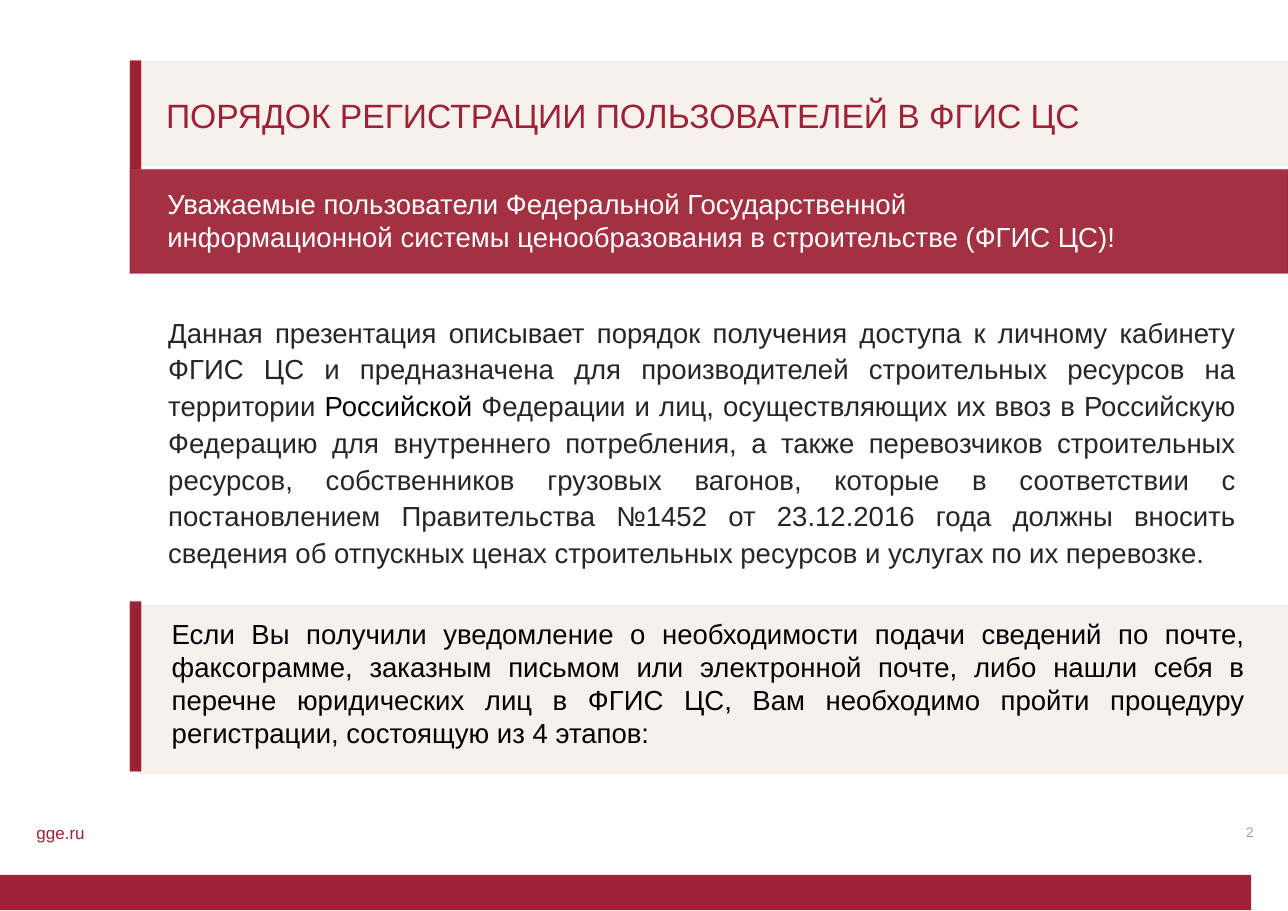
from lxml.etree import SubElement
from pptx import Presentation
from pptx.dml.color import RGBColor as Rgb
from pptx.enum.shapes import MSO_SHAPE as Shape
from pptx.enum.text import MSO_ANCHOR as Anchor, PP_ALIGN as Align
from pptx.oxml.ns import qn
from pptx.util import Cm, Pt

COLORS = {
    "burgundy": "9D2235",
    "greeting": "9E2234",
    "stripe": "9A2233",
    "stripe_edge": "BA2C44",
    "sand": "E9DDD3",
    "tan": "BD9A7A",
    "dark": "262626",
    "black": "000000",
    "white": "FFFFFF",
}
FONT = "Arial"
BAND_LEFT = 3.0
STRIPE_WIDTH = 0.25


def color(name):
    return Rgb.from_string(COLORS[name])


def set_opacity(fill_format, percent):
    if percent < 100:
        tint = fill_format._xPr.find(qn("a:solidFill"))[0]
        SubElement(tint, qn("a:alpha"), val=str(percent * 1000))


def write_text(frame, paragraphs, size=18, ink="black", align=Align.LEFT,
               spacing=None, margins=(0.25, 0.13), anchor=Anchor.TOP):
    frame.word_wrap = True
    frame.vertical_anchor = anchor
    frame.margin_left = frame.margin_right = Cm(margins[0])
    frame.margin_top = frame.margin_bottom = Cm(margins[1])
    for index, runs in enumerate(paragraphs):
        para = frame.paragraphs[0] if index == 0 else frame.add_paragraph()
        para.alignment = align
        if spacing:
            para.line_spacing = spacing
        for run in [runs] if isinstance(runs, str) else runs:
            text, tone = (run, ink) if isinstance(run, str) else run
            span = para.add_run()
            span.text = text
            span.font.name = FONT
            span.font.size = Pt(size)
            span.font.color.rgb = color(tone)


class SlideWriter:
    def __init__(self, deck):
        self.page = deck.slides.add_slide(deck.slide_layouts[6])

    def block(self, left, top, width, height, fill, opacity=100,
              edge=None, edge_opacity=100):
        box = self.page.shapes.add_shape(
            Shape.RECTANGLE, Cm(left), Cm(top), Cm(width), Cm(height))
        box.shadow.inherit = False
        box.fill.solid()
        box.fill.fore_color.rgb = color(fill)
        set_opacity(box.fill, opacity)
        if edge:
            box.line.width = Pt(1)
            box.line.color.rgb = color(edge)
            set_opacity(box.line.fill, edge_opacity) if edge_opacity == 100 else \
                SubElement(box.line._ln.find(qn("a:solidFill"))[0],
                           qn("a:alpha"), val=str(edge_opacity * 1000))
        else:
            box.line.fill.background()
        return box

    def stripe(self, top, height, edge):
        self.block(BAND_LEFT, top, STRIPE_WIDTH, height, "stripe",
                   edge=edge, edge_opacity=41)

    def text(self, left, top, width, height, *paragraphs, **style):
        box = self.page.shapes.add_textbox(
            Cm(left), Cm(top), Cm(width), Cm(height))
        write_text(box.text_frame, paragraphs, **style)


def main():
    deck = Presentation()
    deck.slide_width, deck.slide_height = Cm(29.7), Cm(21)
    slide = SlideWriter(deck)

    slide.block(0, 20.17, 28.85, 0.81, "burgundy")
    site = slide.block(0.84, 18.92, 2.69, 0.53, "white")
    write_text(site.text_frame, ["gge.ru"], size=11.1, ink="burgundy",
               margins=(0, 0), anchor=Anchor.MIDDLE)
    slide.text(28.3, 19, 0.61, 0.79, "2", size=9, ink="tan",
               align=Align.RIGHT, spacing=Pt(10.8), margins=(0, 0))

    slide.block(3.2, 13.94, 26.5, 3.91, "sand", opacity=39)
    slide.block(BAND_LEFT, 3.91, 26.7, 2.39, "greeting", opacity=93,
                edge="burgundy", edge_opacity=49)
    slide.block(3.25, 1.4, 26.45, 2.44, "sand", opacity=39)

    slide.text(3.58, 2.16, 25.93, 1.24,
               "ПОРЯДОК РЕГИСТРАЦИИ ПОЛЬЗОВАТЕЛЕЙ В ФГИС ЦС",
               size=22, ink="burgundy", spacing=0.9)
    slide.text(3.63, 7.06, 25.12, 6.25, [
        "Данная презентация описывает порядок получения доступа к личному "
        "кабинету ФГИС ЦС и предназначена для производителей строительных "
        "ресурсов на территории ",
        ("Российской", "black"),
        " Федерации и лиц, осуществляющих их ввоз в Российскую Федерацию для "
        "внутреннего потребления, а также перевозчиков строительных ресурсов, "
        "собственников грузовых вагонов, которые в соответствии с "
        "постановлением Правительства №1452 от 23.12.2016 года должны вносить "
        "сведения об отпускных ценах строительных ресурсов и услугах по их "
        "перевозке.",
    ], ink="dark", align=Align.JUSTIFY, spacing=Pt(24))

    slide.stripe(1.4, 2.51, "stripe_edge")
    slide.text(3.61, 4.19, 25.15, 1.8,
               "Уважаемые пользователи Федеральной Государственной",
               "информационной системы ценообразования в строительстве (ФГИС ЦС)!",
               ink="white")
    slide.text(3.71, 14.1, 25.25, 3.43,
               "Если Вы получили уведомление о необходимости подачи сведений по "
               "почте, факсограмме, заказным письмом или электронной почте, либо "
               "нашли себя в перечне юридических лиц в ФГИС ЦС, Вам необходимо "
               "пройти процедуру регистрации, состоящую из 4 этапов:",
               align=Align.JUSTIFY)
    slide.stripe(13.87, 3.91, "burgundy")

    deck.save("out.pptx")


if __name__ == "__main__":
    main()
